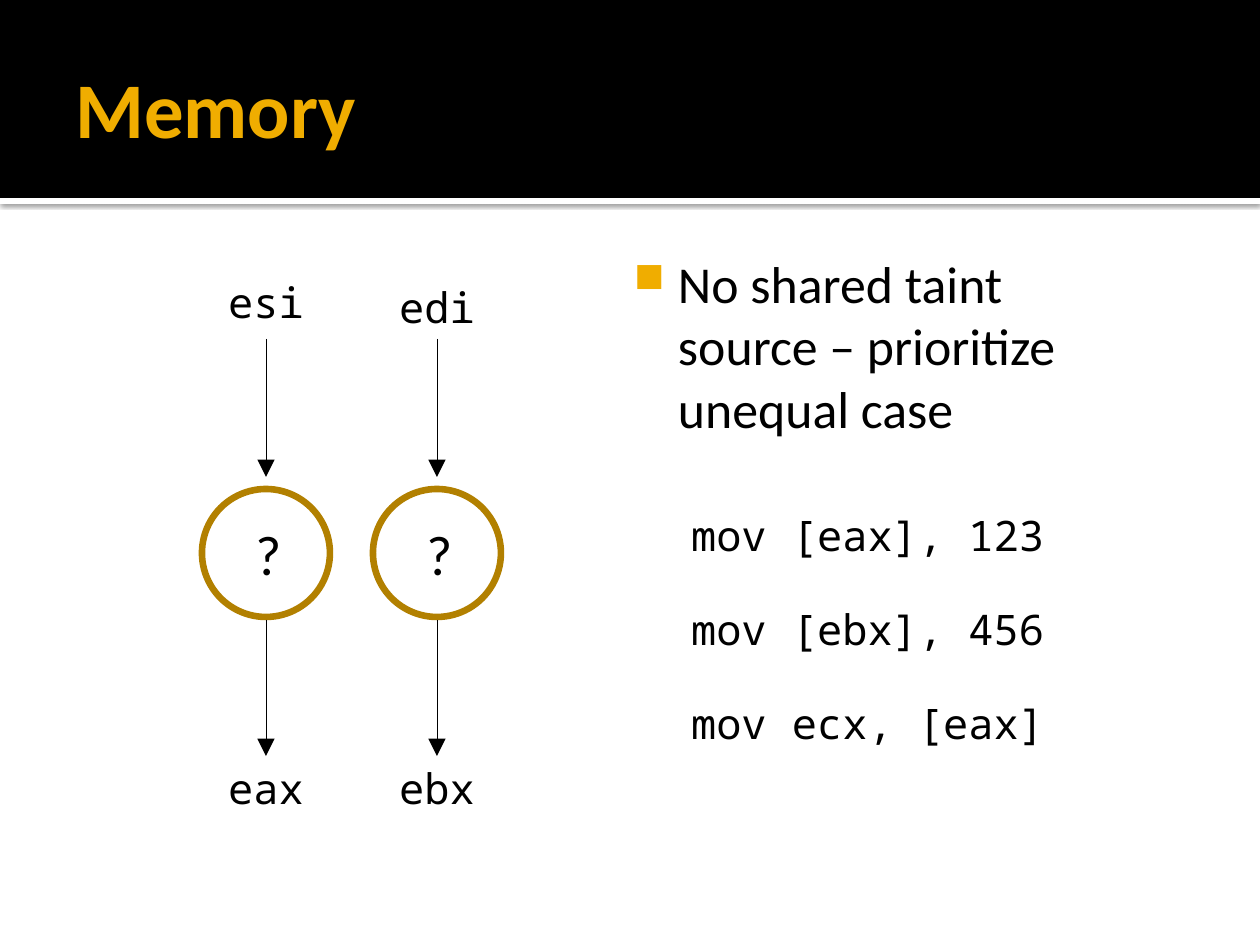
from lxml.etree import SubElement
from pptx import Presentation
from pptx.dml.color import RGBColor
from pptx.enum.shapes import MSO_CONNECTOR, MSO_SHAPE
from pptx.enum.text import MSO_ANCHOR, PP_ALIGN
from pptx.oxml import parse_xml
from pptx.oxml.ns import nsdecls, qn
from pptx.util import Emu, Pt

PX = 914400 / 126
BLACK = RGBColor(0x00, 0x00, 0x00)
WHITE = RGBColor(0xFF, 0xFF, 0xFF)
GOLD = RGBColor(0xF0, 0xAD, 0x00)
BRONZE = RGBColor(0xB2, 0x80, 0x00)
SANS, MONO = "Calibri", "Noto Sans Mono"


def px(*lengths):
    """Turn pixel lengths into EMU."""
    return [Emu(round(length * PX)) for length in lengths]


def add_text(bounds, text, size, font, color=BLACK, align=PP_ALIGN.CENTER):
    """Add a wrapped text box and return its frame."""
    frame = slide.shapes.add_textbox(*px(*bounds)).text_frame
    frame.word_wrap = True
    frame.text = text
    for para in frame.paragraphs:
        para.alignment = align
        for span in para.runs:
            span.font.size = Pt(size)
            span.font.name = font
            span.font.color.rgb = color
    return frame


deck = Presentation()
deck.slide_width, deck.slide_height = px(1260, 945)
slide = deck.slides.add_slide(deck.slide_layouts[6])

# Header band above a white strip that casts a shadow
for top, height, color in ((198, 6, WHITE), (0, 198, BLACK)):
    band = slide.shapes.add_shape(MSO_SHAPE.RECTANGLE, *px(0, top, 1260, height))
    band.shadow.inherit = False
    band.fill.solid()
    band.fill.fore_color.rgb = color
    band.line.fill.background()
    if color == WHITE:
        effects = band._element.spPr.find(qn("a:effectLst"))
        effects.append(parse_xml(
            f'<a:outerShdw {nsdecls("a")} blurRad="31750" dist="10160" dir="5400000">'
            '<a:srgbClr val="000000"><a:alpha val="60000"/></a:srgbClr></a:outerShdw>'))

title = add_text((63, 21, 1134, 173), "Memory", 45, SANS, GOLD, PP_ALIGN.LEFT)
title.vertical_anchor = MSO_ANCHOR.MIDDLE
title.paragraphs[0].runs[0].font.bold = True

# Code listing
code = add_text((610, 503, 515, 267),
                "mov [eax], 123\nmov [ebx], 456\nmov ecx, [eax]", 24, MONO)
for para in code.paragraphs[1:]:
    para.space_before = Pt(25)

# Bulleted remark
remark = add_text((610, 239, 556, 198), "No shared taint source – prioritize unequal case",
                  29.6, SANS, align=PP_ALIGN.LEFT)
remark.margin_left, remark.margin_top = px(8, 13)
properties = remark.paragraphs[0]._p.get_or_add_pPr()
margin, indent = px(60, -44)
properties.set("marL", str(margin))
properties.set("indent", str(indent))
bullet_color = SubElement(properties, qn("a:buClr"))
SubElement(bullet_color, qn("a:srgbClr"), val=str(GOLD))
SubElement(properties, qn("a:buSzPct"), val="80000")
SubElement(properties, qn("a:buChar"), char="■")

# Two flows: source register, unknown value, target register
for center, source, source_top, target in ((266, "esi", 270, "eax"),
                                           (437, "edi", 275, "ebx")):
    circle = slide.shapes.add_shape(MSO_SHAPE.OVAL, *px(center - 64, 489, 128, 128))
    circle.shadow.inherit = False
    circle.fill.solid()
    circle.fill.fore_color.rgb = WHITE
    circle.line.color.rgb = BRONZE
    circle.line.width = Pt(3.78)
    add_text((center - 23, 513, 46, 81), "?", 32, SANS)

    for start, end in ((339, 477), (620, 756)):
        arrow = slide.shapes.add_connector(
            MSO_CONNECTOR.STRAIGHT, *px(center, start, center, end))
        arrow.line.color.rgb = BLACK
        arrow.line.width = Pt(0.5)
        SubElement(arrow.line._get_or_add_ln(), qn("a:tailEnd"),
                   type="triangle", w="lg", len="lg")
        SubElement(arrow._element.spPr, qn("a:effectLst"))

    for name, top in ((source, source_top), (target, 756)):
        add_text((center - 84, top, 168, 63), name, 24, MONO)

deck.save("out.pptx")
